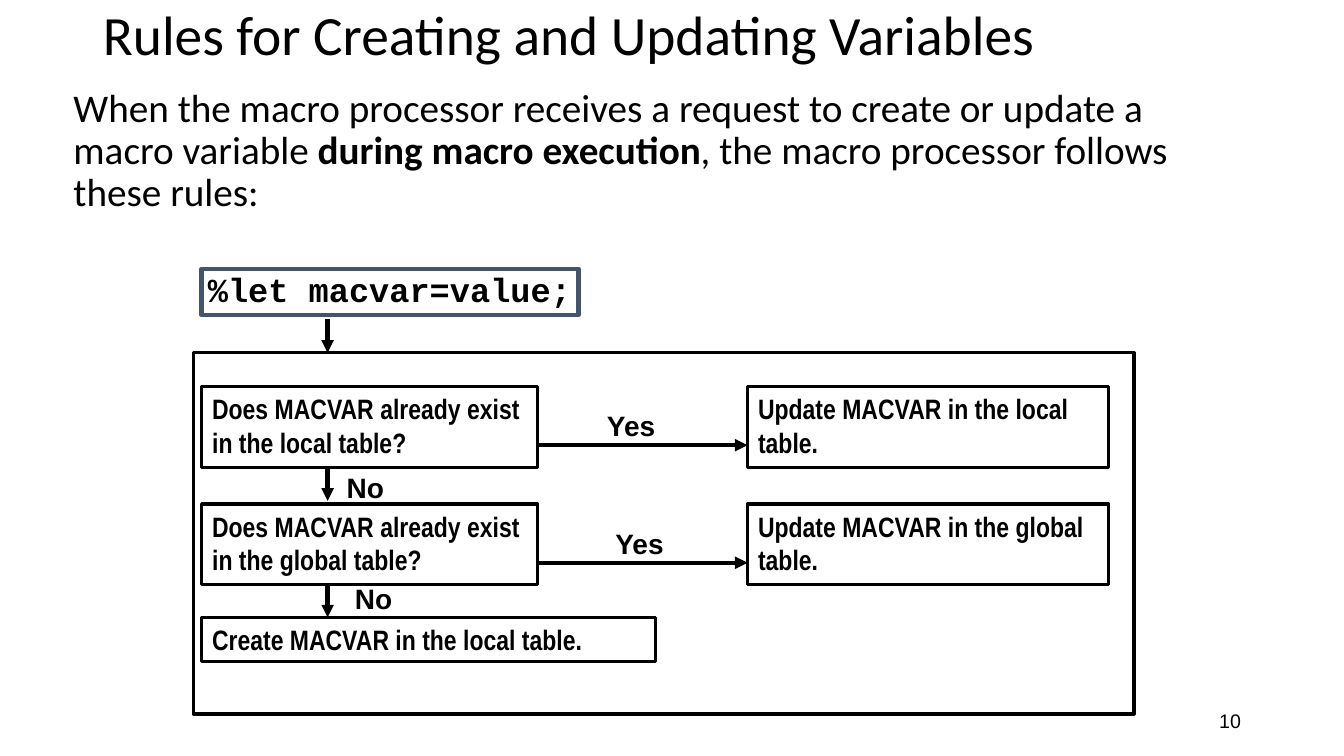
from dataclasses import dataclass

import pptx
import pptx.dml.color
import pptx.enum.shapes
import pptx.enum.text
import pptx.oxml
import pptx.oxml.ns
import pptx.util

PX = 9525  # EMU per px, 96 px to the inch
COLORS = {"ink": "000000", "paper": "FFFFFF", "code": "44546A"}
ALIGN = pptx.enum.text.PP_ALIGN
ANCHOR = pptx.enum.text.MSO_ANCHOR


@dataclass
class Run:
    text: str
    size: float
    font: str
    bold: bool = False


@dataclass
class Block:
    """A text area, framed when it has a line colour."""
    x: int
    y: int
    w: int
    h: int
    runs: tuple[Run, ...] = ()
    line: str = ""
    weight: float = 2.25
    fill: str = ""
    spacing: float = 1.0
    align: ALIGN = ALIGN.LEFT
    anchor: ANCHOR = ANCHOR.TOP
    inset: tuple[int, int] = (10, 5)
    wrap: bool = True


@dataclass
class Arrow:
    x1: int
    y1: int
    x2: int
    y2: int


def px(n: int) -> pptx.util.Emu:
    return pptx.util.Emu(n * PX)


def rgb(name: str) -> pptx.dml.color.RGBColor:
    return pptx.dml.color.RGBColor.from_string(COLORS[name])


def write(sp, b: Block) -> None:
    tf = sp.text_frame
    tf.word_wrap = b.wrap
    tf.vertical_anchor = b.anchor
    tf.margin_left = tf.margin_right = px(b.inset[0])
    tf.margin_top = tf.margin_bottom = px(b.inset[1])
    p = tf.paragraphs[0]
    p.alignment = b.align
    p.line_spacing = b.spacing
    for run in b.runs:
        r = p.add_run()
        r.text = run.text
        r.font.size = pptx.util.Pt(run.size)
        r.font.name = run.font
        r.font.bold = run.bold
        r.font.color.rgb = rgb("ink")


def draw_block(shapes, b: Block) -> None:
    area = px(b.x), px(b.y), px(b.w), px(b.h)
    if b.line:
        sp = shapes.add_shape(pptx.enum.shapes.MSO_SHAPE.RECTANGLE, *area)
        sp.shadow.inherit = False
        sp.line.color.rgb = rgb(b.line)
        sp.line.width = pptx.util.Pt(b.weight)
        if b.fill:
            sp.fill.solid()
            sp.fill.fore_color.rgb = rgb(b.fill)
        else:
            sp.fill.background()
    else:
        sp = shapes.add_textbox(*area)
    if b.runs:
        write(sp, b)


def draw_arrow(shapes, a: Arrow) -> None:
    sp = shapes.add_connector(pptx.enum.shapes.MSO_CONNECTOR.STRAIGHT,
                              px(a.x1), px(a.y1), px(a.x2), px(a.y2))
    sp.line.color.rgb = rgb("ink")
    sp.line.width = pptx.util.Pt(3)
    ns = pptx.oxml.ns.nsdecls("a")
    ln = sp.line._get_or_add_ln()
    ln.append(pptx.oxml.parse_xml(f'<a:tailEnd {ns} type="triangle"/>'))
    ln.addnext(pptx.oxml.parse_xml(f"<a:effectLst {ns}/>"))


def rule_box(x: int, y: int, w: int, h: int, text: str) -> Block:
    return Block(x, y, w, h, (Run(text, 20, "Arial Narrow", True),),
                 line="ink", fill="paper")


def answer(x: int, y: int, w: int, text: str) -> Block:
    return Block(x, y, w, 41, (Run(text, 20, "Arial", True),))


# Flow chart grid
ASK_X, ASK_W, UPDATE_X, UPDATE_W = 192, 320, 712, 344
ROW_Y, ROW_STEP, ROW_H = 368, 112, 77
FLOW_X, FRAME_Y, CREATE_Y = 312, 336, 588

# Heading, introduction and page number
HEADINGS = [
    Block(88, 0, 1104, 71,
          (Run("Rules for Creating and Updating Variables", 39.6, "Calibri"),),
          spacing=0.9, anchor=ANCHOR.MIDDLE),
    Block(60, 79, 1118, 186, (
        Run("When the macro processor receives a request to create or update a "
            "macro variable ", 28, "Calibri"),
        Run("during macro execution", 28, "Calibri", True),
        Run(", the macro processor follows these rules:", 28, "Calibri"),
    ), spacing=0.9),
    Block(904, 667, 288, 38, (Run("10", 14, "Arial"),),
          align=ALIGN.RIGHT, anchor=ANCHOR.MIDDLE),
]

# Statement that starts the flow, and the frame around the rules
START = [
    Block(184, FRAME_Y, 896, 344, line="ink"),
    Block(ASK_X, 256, 359, 44, (Run("%let macvar=value;", 24, "Courier New", True),),
          line="code", weight=3, fill="paper", spacing=0.85, inset=(6, 6), wrap=False),
]

ANSWERS = [answer(568, 384, 72, "Yes"), answer(576, 496, 80, "Yes"),
           answer(320, 443, 64, "No"), answer(328, 549, 64, "No")]


def main() -> None:
    prs = pptx.Presentation()
    prs.slide_width, prs.slide_height = px(1280), px(720)
    shapes = prs.slides.add_slide(prs.slide_layouts[6]).shapes

    blocks = HEADINGS + START
    arrows = [Arrow(FLOW_X, 304, FLOW_X, FRAME_Y)]

    # One row of question, update and arrows per symbol table
    for i, (table, next_y) in enumerate((("local", 477), ("global", CREATE_Y))):
        y = ROW_Y + i * ROW_STEP
        blocks += [
            rule_box(ASK_X, y, ASK_W, ROW_H,
                     f"Does MACVAR already exist in the {table} table?"),
            rule_box(UPDATE_X, y, UPDATE_W, ROW_H,
                     f"Update MACVAR in the {table} table."),
        ]
        arrows += [Arrow(ASK_X + ASK_W, y + 56, UPDATE_X, y + 56),
                   Arrow(FLOW_X, y + ROW_H, FLOW_X, next_y)]
    blocks.append(rule_box(ASK_X, CREATE_Y, 432, 42, "Create MACVAR in the local table."))

    for b in blocks + ANSWERS:
        draw_block(shapes, b)
    for a in arrows:
        draw_arrow(shapes, a)
    prs.save("out.pptx")


if __name__ == "__main__":
    main()
